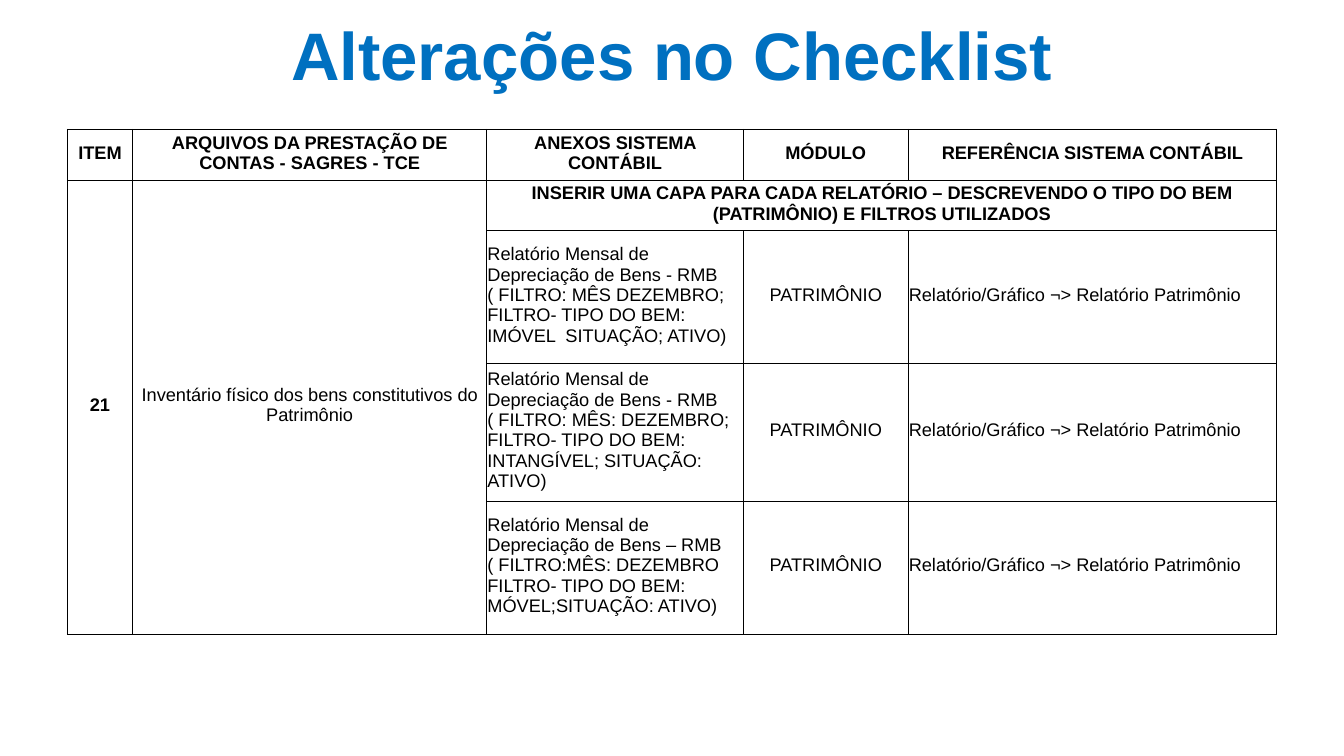
from lxml.etree import SubElement
from pptx import Presentation
from pptx.dml.color import RGBColor
from pptx.enum.text import MSO_ANCHOR, PP_ALIGN
from pptx.oxml.ns import qn
from pptx.util import Pt

COLORS = {"title": "0070C0", "ink": "000000", "outline": "FFFFFF"}
FONT = "Arial"
TITLE = "Alterações no Checklist"
HEADERS = [
    "ITEM",
    "ARQUIVOS DA PRESTAÇÃO DE CONTAS - SAGRES - TCE",
    "ANEXOS SISTEMA CONTÁBIL",
    "MÓDULO",
    "REFERÊNCIA SISTEMA CONTÁBIL",
]
ITEM = "21"
FILE = "Inventário físico dos bens constitutivos do Patrimônio"
NOTICE = ("INSERIR UMA CAPA PARA CADA RELATÓRIO – DESCREVENDO O TIPO DO BEM "
          "(PATRIMÔNIO) E FILTROS UTILIZADOS")
REPORTS = [
    "Relatório Mensal de Depreciação de Bens - RMB ( FILTRO: MÊS DEZEMBRO; "
    "FILTRO- TIPO DO BEM: IMÓVEL  SITUAÇÃO; ATIVO)",
    "Relatório Mensal de Depreciação de Bens - RMB ( FILTRO: MÊS: DEZEMBRO; "
    "FILTRO- TIPO DO BEM: INTANGÍVEL; SITUAÇÃO: ATIVO)",
    "Relatório Mensal de Depreciação de Bens – RMB ( FILTRO:MÊS: DEZEMBRO "
    "FILTRO- TIPO DO BEM: MÓVEL;SITUAÇÃO: ATIVO)",
]
MODULE = "PATRIMÔNIO"
REFERENCE = "Relatório/Gráfico ¬> Relatório Patrimônio"

ROWS = [
    HEADERS,
    [ITEM, FILE, NOTICE, "", ""],
    *[["", "", report, MODULE, REFERENCE] for report in REPORTS],
]
MERGES = [((1, 0), (4, 0)), ((1, 1), (4, 1)), ((1, 2), (1, 4))]
COLUMN_WIDTHS = [46.8, 252.7, 183.6, 117.4, 263.5]
ROW_HEIGHTS = [36.9, 33.8, 95.2, 95.2, 95.2]
LEFT, TITLE_TOP, TABLE_TOP = 48, 15, 92.2
BOLD_TEXTS = {*HEADERS, ITEM, NOTICE}
LEFT_TEXTS = {*REPORTS, REFERENCE}


def write(frame, text, size, color, bold, align):
    """Write one styled run into the first paragraph and return it."""
    frame.word_wrap = True
    frame.vertical_anchor = MSO_ANCHOR.MIDDLE
    para = frame.paragraphs[0]
    para.alignment = align
    span = para.add_run()
    span.text = text
    span.font.name = FONT
    span.font.size = Pt(size)
    span.font.bold = bold
    span.font.color.rgb = RGBColor.from_string(COLORS[color])
    return span


def make_line(parent, tag, width, color):
    """Add a solid line element to the parent and return it."""
    line = SubElement(parent, qn(tag), w=str(Pt(width)))
    fill = SubElement(line, qn("a:solidFill"))
    SubElement(fill, qn("a:srgbClr"), val=COLORS[color])
    return line


def add_title(page):
    """Add the outlined title."""
    box = page.shapes.add_textbox(
        Pt(LEFT), Pt(TITLE_TOP), Pt(sum(COLUMN_WIDTHS)), Pt(46))
    span = write(box.text_frame, TITLE, 48, "title", True, PP_ALIGN.CENTER)
    properties = span.font._element
    properties.insert(0, make_line(properties, "a:ln", 0.75, "outline"))


def style_cell(cell, text):
    """Set the borders, margins and text of one cell."""
    properties = cell._tc.get_or_add_tcPr()
    for side in "LRTB":
        make_line(properties, f"a:ln{side}", 0.5, "ink")
    cell.fill.background()
    cell.margin_left = cell.margin_right = cell.margin_top = Pt(0.7)
    cell.margin_bottom = Pt(3.6)
    cell.vertical_anchor = MSO_ANCHOR.MIDDLE
    if text:
        align = PP_ALIGN.LEFT if text in LEFT_TEXTS else PP_ALIGN.CENTER
        write(cell.text_frame, text, 13, "ink", text in BOLD_TEXTS, align)


def add_checklist(page):
    """Add the checklist table with its merged cells."""
    table = page.shapes.add_table(
        len(ROWS), len(HEADERS), Pt(LEFT), Pt(TABLE_TOP),
        Pt(sum(COLUMN_WIDTHS)), Pt(sum(ROW_HEIGHTS))).table
    table.first_row = table.horz_banding = False
    for column, width in zip(table.columns, COLUMN_WIDTHS):
        column.width = Pt(width)
    for row, height, texts in zip(table.rows, ROW_HEIGHTS, ROWS):
        row.height = Pt(height)
        for cell, text in zip(row.cells, texts):
            style_cell(cell, text)
    for first, last in MERGES:
        table.cell(*first).merge(table.cell(*last))


def main():
    """Build and save the deck."""
    deck = Presentation()
    deck.slide_width, deck.slide_height = Pt(960), Pt(540)
    page = deck.slides.add_slide(deck.slide_layouts[6])
    add_title(page)
    add_checklist(page)
    deck.save("out.pptx")


if __name__ == "__main__":
    main()
